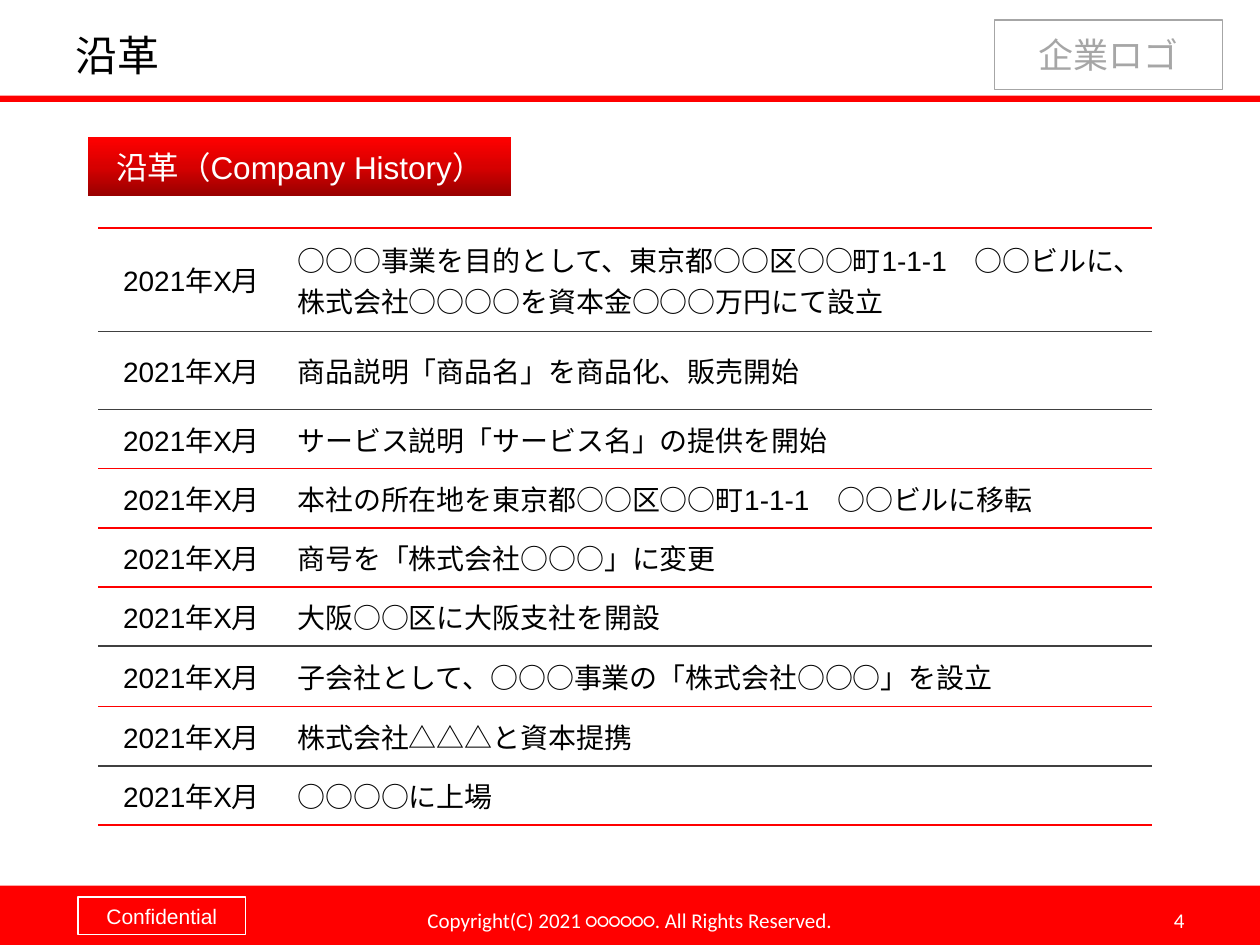
from copy import deepcopy

from lxml.etree import SubElement
from pptx import Presentation
from pptx.dml.color import RGBColor
from pptx.enum.shapes import MSO_SHAPE as Shape
from pptx.enum.text import MSO_ANCHOR as Anchor, PP_ALIGN as Align
from pptx.oxml.ns import qn
from pptx.util import Inches, Pt

COLORS = {
    "red": "FF0000", "mid_red": "D70000", "dark_red": "970000",
    "gray": "A6A6A6", "rule": "404040", "white": "FFFFFF", "black": "000000",
}
DATE = "2021年X月"
EVENTS = [
    "○○○事業を目的として、東京都○○区○○町1-1-1\u3000○○ビルに、\n"
    "株式会社○○○○を資本金○○○万円にて設立",
    "商品説明「商品名」を商品化、販売開始",
    "サービス説明「サービス名」の提供を開始",
    "本社の所在地を東京都○○区○○町1-1-1\u3000○○ビルに移転",
    "商号を「株式会社○○○」に変更",
    "大阪○○区に大阪支社を開設",
    "子会社として、○○○事業の「株式会社○○○」を設立",
    "株式会社△△△と資本提携",
    "○○○○に上場",
]
COLUMN_WIDTHS = [1.48, 6.88]
ROW_HEIGHTS = [0.82, 0.62] + [0.47] * 4 + [0.48] + [0.47] * 2
# Rules from the top of the table to its bottom
RULES = ["red", "rule", "rule", "red", "red", "red", "rule", "red", "rule", "red"]


def rgb(name):
    return RGBColor.from_string(COLORS[name])


def write(frame, text, size, color, font="Calibri", align=Align.LEFT):
    frame.text = text
    frame.word_wrap = True
    frame.vertical_anchor = Anchor.MIDDLE
    for paragraph in frame.paragraphs:
        paragraph.alignment = align
        for run in paragraph.runs:
            run.font.size = Pt(size)
            run.font.name = font
            run.font.color.rgb = rgb(color)


def add_box(slide, place, fill=None, line=None):
    box = slide.shapes.add_shape(Shape.RECTANGLE, *map(Inches, place))
    box.shadow.inherit = False
    if fill:
        box.fill.solid()
        box.fill.fore_color.rgb = rgb(fill)
    else:
        box.fill.background()
    if line:
        box.line.color.rgb = rgb(line)
        box.line.width = Pt(0.75)
    else:
        box.line.fill.background()
    return box


def add_label(slide, place, text, align):
    label = slide.shapes.add_textbox(*map(Inches, place))
    write(label.text_frame, text, 12, "white", align=align)


def fill_gradient(shape, colors):
    shape.fill.gradient()
    shape.fill.gradient_angle = 90
    stop_list = shape.fill._fill._gradFill.find(qn("a:gsLst"))
    stop_list.insert(1, deepcopy(stop_list[0]))
    for index, (stop, color) in enumerate(zip(shape.fill.gradient_stops, colors)):
        stop.position = index / (len(colors) - 1)
        stop.color.rgb = rgb(color)


def set_borders(cell, top, bottom):
    properties = cell._tc.get_or_add_tcPr()
    sides = [("L", None), ("R", None), ("T", top), ("B", bottom)]
    for index, (side, color) in enumerate(sides):
        border = SubElement(properties, qn(f"a:ln{side}"), w=str(Pt(1)))
        if color:
            fill = SubElement(border, qn("a:solidFill"))
            SubElement(fill, qn("a:srgbClr"), val=COLORS[color])
        else:
            SubElement(border, qn("a:noFill"))
        properties.insert(index, border)


def add_history(slide):
    place = (0.78, 1.81, sum(COLUMN_WIDTHS), sum(ROW_HEIGHTS))
    history = slide.shapes.add_table(
        len(EVENTS), len(COLUMN_WIDTHS), *map(Inches, place)).table
    history.first_row = history.horz_banding = False
    for column, width in zip(history.columns, COLUMN_WIDTHS):
        column.width = Inches(width)
    for index, (row, event) in enumerate(zip(history.rows, EVENTS)):
        row.height = Inches(ROW_HEIGHTS[index])
        date_cell, event_cell = row.cells
        for cell, text, align in ((date_cell, DATE, Align.CENTER),
                                  (event_cell, event, Align.LEFT)):
            write(cell.text_frame, text, 16, "black", "Arial", align)
            cell.vertical_anchor = Anchor.MIDDLE
            cell.fill.background()
            set_borders(cell, RULES[index], RULES[index + 1])


def main():
    deck = Presentation()
    deck.slide_width, deck.slide_height = Inches(10), Inches(7.5)
    slide = deck.slides.add_slide(deck.slide_layouts[5])

    # Header and footer bands
    add_box(slide, (0, 7.03, 10, 0.47), fill="red")
    add_box(slide, (0, 0.76, 10, 0.05), fill="red")
    logo_space = add_box(slide, (7.89, 0.16, 1.81, 0.55), line="gray")
    write(logo_space.text_frame, "企業ロゴ", 20, "gray", align=Align.CENTER)
    notice = add_box(slide, (0.62, 7.12, 1.33, 0.3), line="white")
    write(notice.text_frame, "Confidential", 12, "white", "Arial", Align.CENTER)

    # Title
    title = slide.shapes.title
    title.left, title.top, title.width, title.height = map(
        Inches, (0.5, 0.16, 7.24, 0.55))
    write(title.text_frame, "沿革", 24, "black")

    # Footer text
    add_label(slide, (7.17, 7.1, 2.33, 0.4), "4", Align.RIGHT)
    add_label(slide, (2.91, 7.1, 4.18, 0.4),
              "Copyright(C) 2021 ○○○○○○. All Rights Reserved.", Align.CENTER)

    # Company history
    add_history(slide)
    heading = add_box(slide, (0.7, 1.09, 3.36, 0.47))
    fill_gradient(heading, ["dark_red", "mid_red", "red"])
    write(heading.text_frame, "沿革（Company History）", 18, "white", "Arial",
          Align.CENTER)

    deck.save("out.pptx")


if __name__ == "__main__":
    main()
